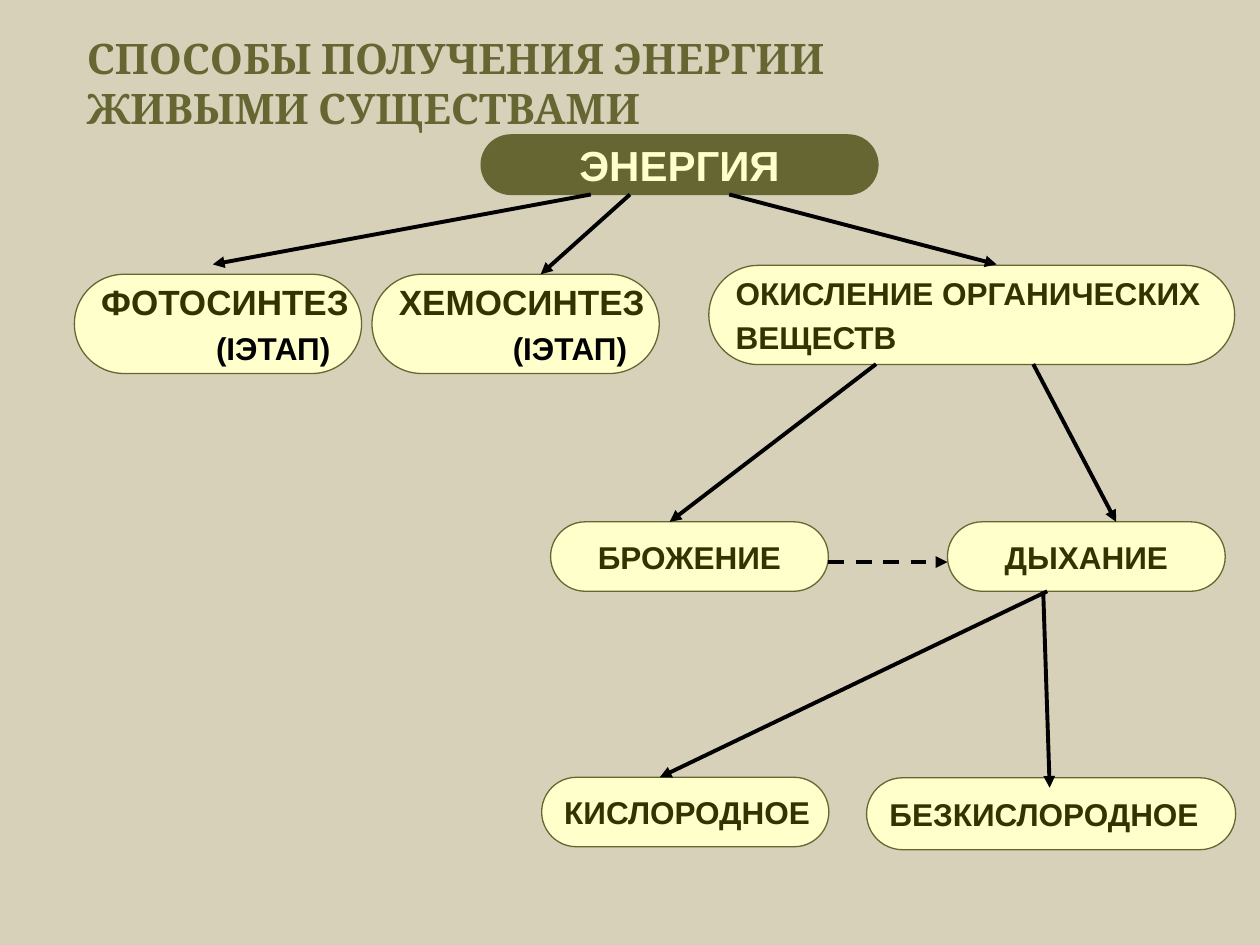
"""Build a slide with a tree of the ways living things obtain energy."""
import pptx
import pptx.dml.color
import pptx.enum.dml
import pptx.enum.shapes
import pptx.enum.text
import pptx.oxml
import pptx.oxml.ns
import pptx.util

Cm = pptx.util.Cm
Pt = pptx.util.Pt
RGB = pptx.dml.color.RGBColor
Align = pptx.enum.text.PP_ALIGN
SAND = RGB(0xD6, 0xD1, 0xB8)
OLIVE = RGB(0x66, 0x66, 0x33)
CREAM = RGB(0xFF, 0xFF, 0xCC)
DARK = RGB(0x33, 0x33, 0x00)
BLACK = RGB(0, 0, 0)
LEFT, MID = Align.LEFT, Align.CENTER


def write(para, text, size=18, font="Arial", color=DARK, align=LEFT,
          hang=0.97, before=0.2):
    para.alignment = align
    para.space_before = Pt(size * before)
    props = para._p.get_or_add_pPr()
    props.set("marL", str(Cm(hang)))
    props.set("indent", str(-Cm(hang)))
    run = para.add_run()
    run.text = text
    run.font.size = Pt(size)
    run.font.name = font
    run.font.bold = True
    run.font.color.rgb = color


deck = pptx.Presentation()
deck.slide_width = Cm(25.4)
deck.slide_height = Cm(19.05)
slide = deck.slides.add_slide(deck.slide_layouts[6])
slide.background.fill.solid()
slide.background.fill.fore_color.rgb = SAND

title = slide.shapes.add_textbox(Cm(1.5), Cm(0.53), Cm(23), Cm(1.8)).text_frame
title.word_wrap = False
head = ["СПОСОБЫ ПОЛУЧЕНИЯ ЭНЕРГИИ", "ЖИВЫМИ СУЩЕСТВАМИ"]
for row, text in enumerate(head):
    para = title.add_paragraph() if row else title.paragraphs[0]
    write(para, text, size=24, font="Cambria", color=OLIVE, hang=0, before=0)

big = {"size": 20}
stage = ("(IЭТАП)", {"color": BLACK, "align": MID})
boxes = [
    (9.7, 2.72, 8, 1.2, OLIVE,
     [("ЭНЕРГИЯ", {"size": 24, "color": CREAM, "align": MID})]),
    (1.5, 5.53, 5.79, 2, CREAM, [("ФОТОСИНТЕЗ", big), stage]),
    (7.5, 5.53, 5.79, 2, CREAM, [("ХЕМОСИНТЕЗ", big), stage]),
    (14.29, 5.35, 10.6, 2, CREAM,
     [("ОКИСЛЕНИЕ ОРГАНИЧЕСКИХ", {}), ("ВЕЩЕСТВ", {})]),
    (11.1, 10.52, 5.6, 1.4, CREAM, [("БРОЖЕНИЕ", {"align": MID})]),
    (19.1, 10.52, 5.6, 1.4, CREAM, [("ДЫХАНИЕ", {"align": MID})]),
    (10.92, 15.67, 5.79, 1.4, CREAM, [("КИСЛОРОДНОЕ", {})]),
    (17.47, 15.68, 7.44, 1.45, CREAM, [("БЕЗКИСЛОРОДНОЕ", {})]),
]
for x, y, width, height, fill, rows in boxes:
    box = slide.shapes.add_shape(
        pptx.enum.shapes.MSO_SHAPE.ROUNDED_RECTANGLE,
        Cm(x), Cm(y), Cm(width), Cm(height))
    box.adjustments[0] = 0.5
    box.shadow.inherit = False
    box.fill.solid()
    box.fill.fore_color.rgb = fill
    box.line.color.rgb = OLIVE
    box.line.width = Pt(0.75)
    frame = box.text_frame
    frame.word_wrap = False
    frame.vertical_anchor = pptx.enum.text.MSO_ANCHOR.MIDDLE
    for row, (text, style) in enumerate(rows):
        para = frame.add_paragraph() if row else frame.paragraphs[0]
        write(para, text, **style)

arrows = [
    (11.91, 3.92, 4.29, 5.33, False),
    (12.7, 3.92, 10.9, 5.53, False),
    (14.7, 3.92, 20.09, 5.33, False),
    (17.66, 7.34, 13.5, 10.52, False),
    (20.83, 7.34, 22.5, 10.52, False),
    (21.11, 11.92, 13.3, 15.67, False),
    (21.03, 11.92, 21.16, 15.88, False),
    (16.7, 11.33, 19.1, 11.33, True),
]
for x1, y1, x2, y2, dashed in arrows:
    arrow = slide.shapes.add_connector(
        pptx.enum.shapes.MSO_CONNECTOR.STRAIGHT, Cm(x1), Cm(y1), Cm(x2), Cm(y2))
    arrow.line.color.rgb = BLACK
    arrow.line.width = Pt(2.25)
    if dashed:
        arrow.line.dash_style = pptx.enum.dml.MSO_LINE.DASH
    tail = pptx.oxml.parse_xml(
        f'<a:tailEnd {pptx.oxml.ns.nsdecls("a")} type="triangle"/>')
    arrow.line._get_or_add_ln().append(tail)
    arrow._element.spPr.append(
        pptx.oxml.parse_xml(f'<a:effectLst {pptx.oxml.ns.nsdecls("a")}/>'))

deck.save("out.pptx")
